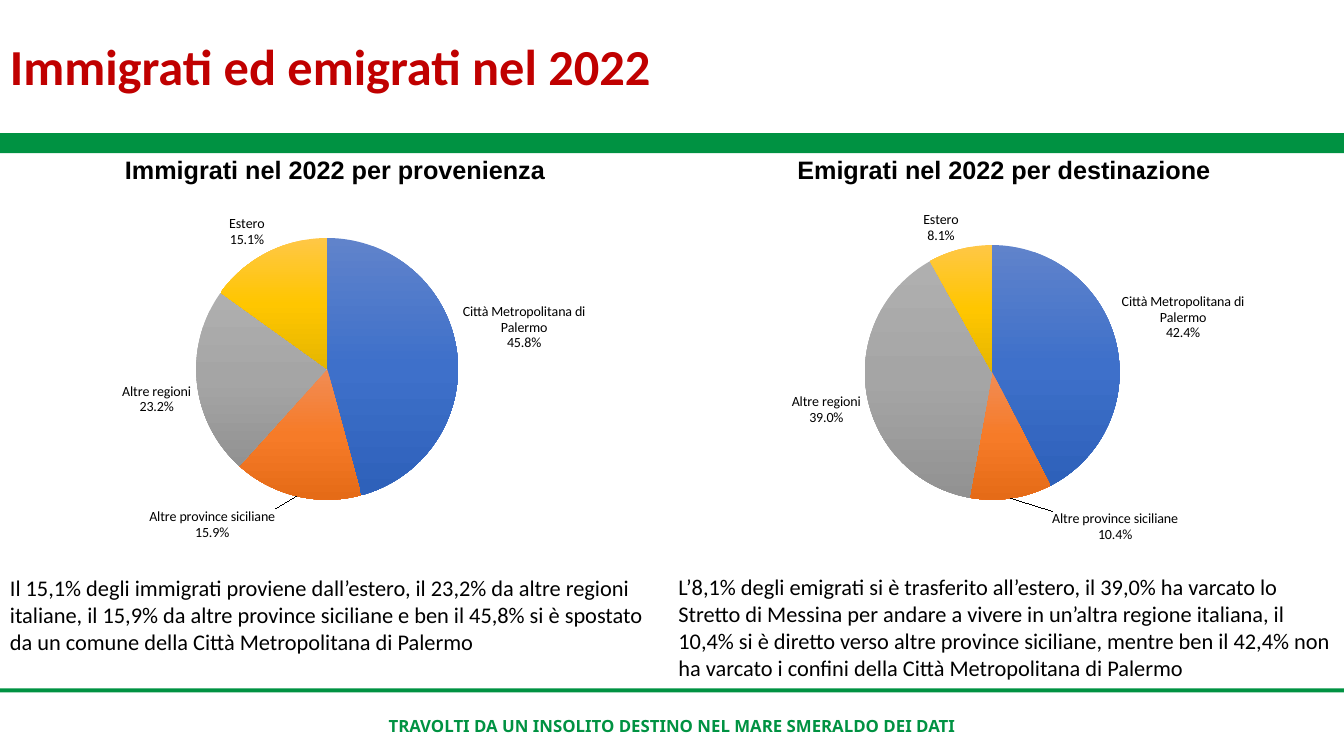
from lxml import etree
from pptx import Presentation
from pptx.chart.data import CategoryChartData
from pptx.dml.color import RGBColor
from pptx.enum.chart import XL_CHART_TYPE, XL_LABEL_POSITION
from pptx.enum.shapes import MSO_SHAPE
from pptx.enum.text import MSO_ANCHOR, PP_ALIGN
from pptx.oxml import parse_xml
from pptx.oxml.ns import nsdecls, qn
from pptx.util import Inches, Pt

PIE = XL_CHART_TYPE.PIE
OUTSIDE_END = XL_LABEL_POSITION.OUTSIDE_END
RECTANGLE = MSO_SHAPE.RECTANGLE
MIDDLE, TOP = MSO_ANCHOR.MIDDLE, MSO_ANCHOR.TOP
LEFT, CENTER = PP_ALIGN.LEFT, PP_ALIGN.CENTER

COLORS = {"green": "009242", "red": "C00000", "black": "000000"}
# Top, middle and bottom shade of each slice
SLICE_SHADES = [
    ("6083CB", "3E70CA", "2E61BA"),
    ("F18C55", "F67B28", "E56B17"),
    ("AFAFAF", "A5A5A5", "929292"),
    ("FFC746", "FFC600", "E5B600"),
]
CATEGORIES = ["Città Metropolitana di Palermo", "Altre province siciliane",
              "Altre regioni", "Estero"]
PROVINCES = 1
COLUMN_WIDTH = 6.69

# Plot areas (x, y, w, h) and label shifts are fractions of the chart
COLUMNS = [
    {
        "left": 0,
        "heading": "Immigrati nel 2022 per provenienza",
        "heading_box": (1.14, 1.48, 4.41, 0.4),
        "values": [45.8, 15.9, 23.2, 15.1],
        "plot_area": (0.29, 0.12, 0.39, 0.74),
        "label_shift": (-0.03, 0.02),
        "comment_box": (5.65, 0.91),
        "comment": "Il 15,1% degli immigrati proviene dall’estero, il 23,2% da "
                   "altre regioni italiane, il 15,9% da altre province siciliane e "
                   "ben il 45,8% si è spostato da un comune della Città "
                   "Metropolitana di Palermo",
    },
    {
        "left": 6.63,
        "heading": "Emigrati nel 2022 per destinazione",
        "heading_box": (7.81, 1.48, 4.34, 0.4),
        "values": [42.4, 10.4, 39.0, 8.1],
        "plot_area": (0.29, 0.14, 0.38, 0.72),
        "label_shift": (0.06, 0.02),
        "comment_box": (5.64, 1.18),
        "comment": "L’8,1% degli emigrati si è trasferito all’estero, il 39,0% ha "
                   "varcato lo Stretto di Messina per andare a vivere in un’altra "
                   "regione italiana, il 10,4% si è diretto verso altre province "
                   "siciliane, mentre ben il 42,4% non ha varcato i confini della "
                   "Città Metropolitana di Palermo",
    },
]


def add_band(slide, top, height):
    band = slide.shapes.add_shape(RECTANGLE, 0, Inches(top),
                                  Inches(13.33), Inches(height))
    band.shadow.inherit = False
    band.fill.solid()
    band.fill.fore_color.rgb = RGBColor.from_string(COLORS["green"])
    band.line.fill.background()


def add_text(slide, box, text, size, font="Calibri", color="black", bold=False,
             align=LEFT, anchor=TOP, wrap=True, line_spacing=None):
    shape = slide.shapes.add_textbox(*(Inches(length) for length in box))
    frame = shape.text_frame
    frame.word_wrap = wrap
    frame.vertical_anchor = anchor
    paragraph = frame.paragraphs[0]
    paragraph.alignment = align
    paragraph.line_spacing = line_spacing
    run = paragraph.add_run()
    run.text = text
    run.font.name = font
    run.font.size = Pt(size)
    run.font.bold = bold
    run.font.color.rgb = RGBColor.from_string(COLORS[color])


def manual_layout(fractions, inner=False):
    """Return layout XML for a plot area (x, y, w, h) or a label shift (x, y)."""
    names = "xywh"[:len(fractions)]
    target = '<c:layoutTarget val="inner"/>' if inner else ""
    modes = '<c:xMode val="edge"/><c:yMode val="edge"/>' if inner else ""
    values = "".join(f'<c:{name} val="{value}"/>'
                     for name, value in zip(names, fractions))
    return (f'<c:layout {nsdecls("c")}><c:manualLayout>{target}{modes}{values}'
            '</c:manualLayout></c:layout>')


def shade_slice(point, shades):
    stops = "".join(f'<a:gs pos="{position}"><a:srgbClr val="{shade}"/></a:gs>'
                    for position, shade in zip((0, 50000, 100000), shades))
    properties = point.format.fill
    properties.background()
    point.format.line.fill.background()
    shape_properties = point._element.find(
        f'{qn("c:dPt")}[last()]/{qn("c:spPr")}')
    empty_fill = shape_properties.find(qn("a:noFill"))
    shape_properties.replace(empty_fill, parse_xml(
        f'<a:gradFill {nsdecls("a")} rotWithShape="1"><a:gsLst>{stops}</a:gsLst>'
        '<a:lin ang="5400000" scaled="0"/></a:gradFill>'))


def label_slices(series, label_shift):
    labels = series.data_labels
    labels.show_value = False
    labels.show_category_name = True
    labels.show_percentage = True
    labels.number_format = "0.0%"
    labels.number_format_is_linked = False
    labels.position = OUTSIDE_END
    element = series._element.find(qn("c:dLbls"))
    bubble_size = element.find(qn("c:showBubbleSize"))
    separator = etree.Element(qn("c:separator"))
    separator.text = "\n"
    bubble_size.addnext(separator)
    element.insert(0, parse_xml(
        f'<c:dLbl {nsdecls("c")}><c:idx val="{PROVINCES}"/>'
        f'{manual_layout(label_shift)}'
        '<c:numFmt formatCode="0.0%" sourceLinked="0"/>'
        '<c:dLblPos val="outEnd"/><c:showLegendKey val="0"/><c:showVal val="0"/>'
        '<c:showCatName val="1"/><c:showSerName val="0"/><c:showPercent val="1"/>'
        '<c:showBubbleSize val="0"/><c:separator>\n</c:separator></c:dLbl>'))


def add_pie(slide, left, values, plot_area, label_shift):
    data = CategoryChartData()
    data.categories = CATEGORIES
    data.add_series("Series 1", values)
    chart = slide.shapes.add_chart(PIE, Inches(left), Inches(1.94),
                                   Inches(COLUMN_WIDTH), Inches(3.51), data).chart
    chart.has_title = False
    chart.has_legend = False
    chart.font.name = "Calibri"
    chart.font.size = Pt(10)
    chart.font.color.rgb = RGBColor.from_string(COLORS["black"])
    plot = chart.plots[0]
    plot.vary_by_categories = True
    series = plot.series[0]
    for index, shades in enumerate(SLICE_SHADES):
        shade_slice(series.points[index], shades)
    label_slices(series, label_shift)
    plot_element = chart._chartSpace.chart.plotArea
    for layout in plot_element.findall(qn("c:layout")):
        plot_element.remove(layout)
    plot_element.insert(0, parse_xml(manual_layout(plot_area, inner=True)))


def main():
    presentation = Presentation()
    presentation.slide_width = Inches(13.33)
    presentation.slide_height = Inches(7.5)
    slide = presentation.slides.add_slide(presentation.slide_layouts[6])

    add_band(slide, 1.32, 0.2)
    add_band(slide, 6.83, 0.04)
    add_text(slide, (2.81, 7.05, 7.71, 0.3),
             "TRAVOLTI DA UN INSOLITO DESTINO NEL MARE SMERALDO DEI DATI", 12,
             font="Noto Sans", color="green", bold=True, align=CENTER)
    add_text(slide, (0, 0.15, 12.42, 1.07), "Immigrati ed emigrati nel 2022", 36,
             color="red", bold=True, anchor=MIDDLE, line_spacing=0.9)

    for column in COLUMNS:
        add_pie(slide, column["left"], column["values"],
                column["plot_area"], column["label_shift"])
        top, height = column["comment_box"]
        add_text(slide, (column["left"], top, COLUMN_WIDTH, height),
                 column["comment"], 16)
        add_text(slide, column["heading_box"], column["heading"], 18,
                 font="Arial", bold=True, wrap=False)

    presentation.save("out.pptx")


if __name__ == "__main__":
    main()
